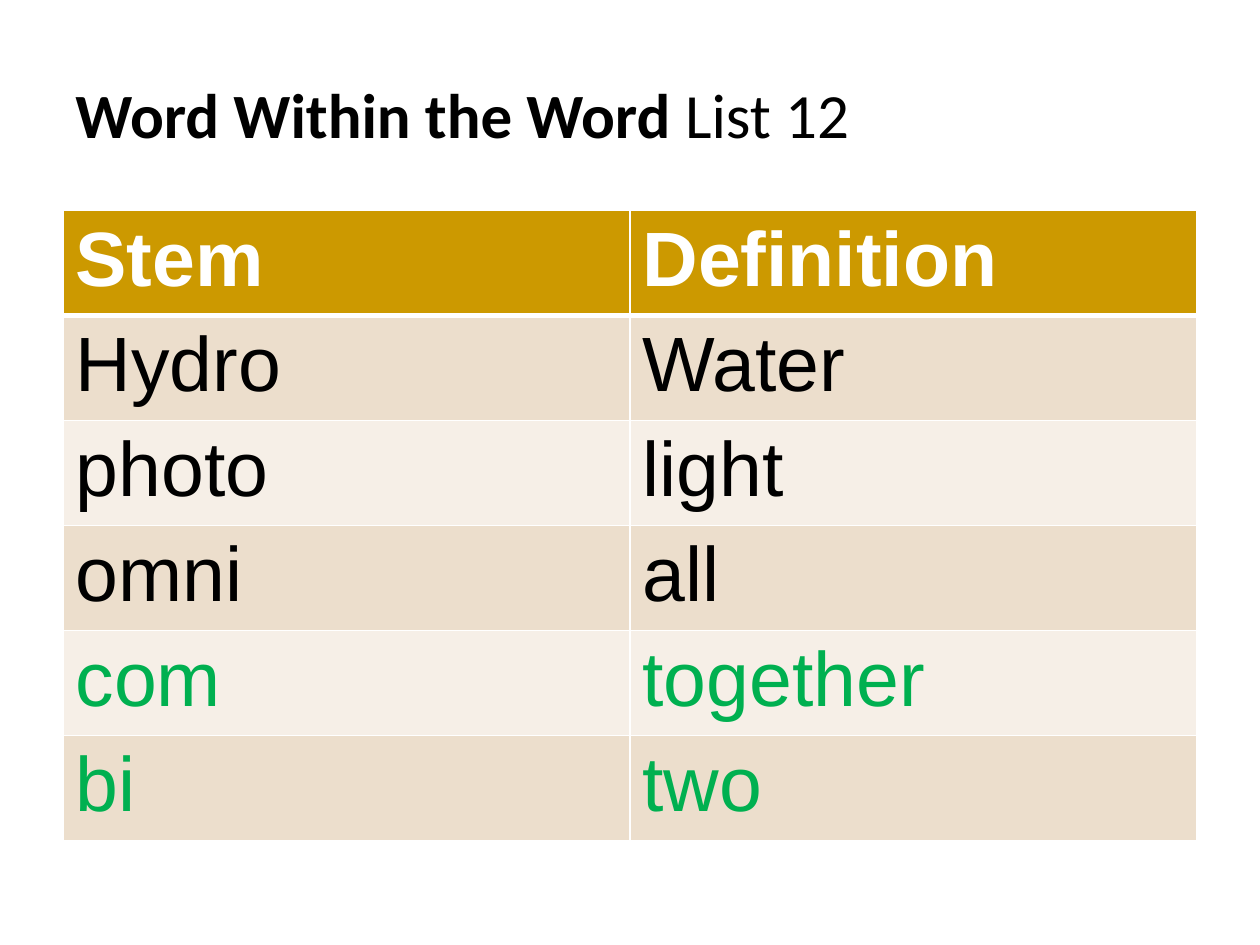
from lxml.etree import SubElement
from pptx import Presentation
from pptx.dml.color import RGBColor
from pptx.enum.text import MSO_ANCHOR
from pptx.oxml.ns import qn
from pptx.util import Inches, Pt

WHITE, BLACK, GREEN = "FFFFFF", "000000", "00B050"
GOLD, BANDS = "CC9900", ("ECDECC", "F6EFE7")
ROWS = [
    ("Stem", "Definition"),
    ("Hydro", "Water"),
    ("photo", "light"),
    ("omni", "all"),
    ("com", "together"),
    ("bi", "two"),
]
FIRST_GREEN_ROW = 4


def color(hex_value):
    return RGBColor.from_string(hex_value)


class SlideBuilder:
    title_format = {"name": "Calibri", "size": Pt(36)}
    cell_format = {"name": "Arial", "size": Pt(44)}

    def __init__(self, slide):
        self.slide = slide

    def add_span(self, para, text, hex_value, **format_values):
        span = para.add_run()
        span.text = text
        for name, value in format_values.items():
            setattr(span.font, name, value)
        span.font.color.rgb = color(hex_value)

    def add_title(self, spans, left, top, width, height):
        """Add a bottom-anchored title from (text, bold) spans."""
        box = self.slide.shapes.add_textbox(
            Inches(left), Inches(top), Inches(width), Inches(height))
        frame = box.text_frame
        frame.word_wrap = True
        frame.vertical_anchor = MSO_ANCHOR.BOTTOM
        for text, bold in spans:
            self.add_span(frame.paragraphs[0], text, BLACK, bold=bold, **self.title_format)

    def add_borders(self, cell, widths):
        """Draw white borders; widths maps a side (L, R, T, B) to points."""
        properties = cell._tc.get_or_add_tcPr()
        for index, (side, width) in enumerate(widths.items()):
            line = properties.makeelement(qn(f"a:ln{side}"), {"w": str(Pt(width))})
            fill = SubElement(line, qn("a:solidFill"))
            SubElement(fill, qn("a:srgbClr"), val=WHITE)
            properties.insert(index, line)

    def add_word_table(self, rows, left, top, width, row_height):
        frame = self.slide.shapes.add_table(
            len(rows), len(rows[0]), Inches(left), Inches(top),
            Inches(width), Inches(row_height * len(rows)))
        table = frame.table
        for row_index, words in enumerate(rows):
            header = row_index == 0
            fill = GOLD if header else BANDS[(row_index - 1) % 2]
            ink = WHITE if header else GREEN if row_index >= FIRST_GREEN_ROW else BLACK
            widths = {"L": 1, "R": 1, "T": 3 if row_index == 1 else 1, "B": 3 if header else 1}
            for column_index, word in enumerate(words):
                cell = table.cell(row_index, column_index)
                cell.fill.solid()
                cell.fill.fore_color.rgb = color(fill)
                self.add_borders(cell, widths)
                para = cell.text_frame.paragraphs[0]
                self.add_span(para, word, ink, bold=header, **self.cell_format)


def main():
    deck = Presentation()
    deck.slide_width, deck.slide_height = Inches(10), Inches(7.5)
    page = SlideBuilder(deck.slides.add_slide(deck.slide_layouts[6]))
    page.add_title([("Word Within the Word ", True), ("List 12", False)], 0.5, 0.08, 7.42, 1.17)
    page.add_word_table(ROWS, 0.5, 1.67, 9, 0.78)
    deck.save("out.pptx")


if __name__ == "__main__":
    main()
